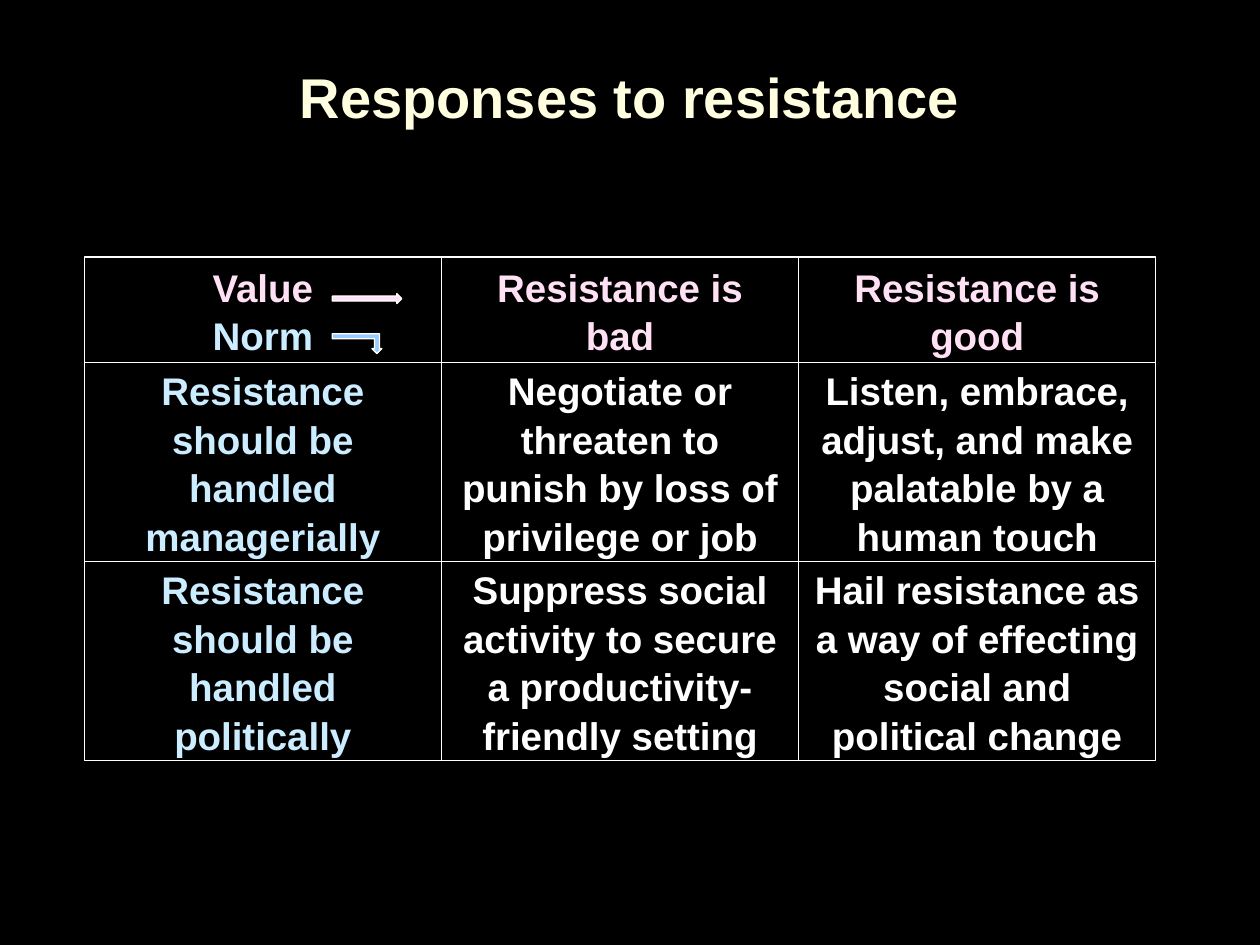
import pptx
import pptx.util
import pptx.dml.color
import pptx.enum.shapes
import pptx.enum.text

Cm = pptx.util.Cm
Pt = pptx.util.Pt
RGB = pptx.dml.color.RGBColor
KIND = pptx.enum.shapes.MSO_SHAPE
MID = pptx.enum.text.PP_ALIGN.CENTER
ANCHOR = pptx.enum.text.MSO_ANCHOR
FIT = pptx.enum.text.MSO_AUTO_SIZE

BLACK = RGB(0x00, 0x00, 0x00)
WHITE = RGB(0xFF, 0xFF, 0xFF)
CREAM = RGB(0xFF, 0xFF, 0xE0)
PINK = RGB(0xFF, 0xE0, 0xF5)
PALE = RGB(0xCC, 0xEC, 0xFF)
BLUE = RGB(0x99, 0xCC, 0xFF)


def style(par, size, color, gap):
    par.alignment = MID
    par.line_spacing = gap
    form = {"name": "Arial", "size": Pt(size), "bold": True}
    for key, val in form.items():
        setattr(par.font, key, val)
    par.font.color.rgb = color


def draw(kind, left, top, width, height, fill=None):
    shape = slide.shapes.add_shape(kind, Cm(left), Cm(top), Cm(width), Cm(height))
    shape.shadow.inherit = False
    if fill is None:
        shape.fill.background()
    else:
        shape.fill.solid()
        shape.fill.fore_color.rgb = fill
    shape.line.color.rgb = WHITE
    shape.line.width = Pt(0.75)
    return shape


deck = pptx.Presentation()
deck.slide_width = Cm(25.4)
deck.slide_height = Cm(19.05)
slide = deck.slides.add_slide(deck.slide_layouts[5])
slide.background.fill.solid()
slide.background.fill.fore_color.rgb = BLACK

title = slide.shapes.title
place = {"left": Cm(0), "top": Cm(1.04), "width": Cm(25.4), "height": Cm(1.9)}
for key, val in place.items():
    setattr(title, key, val)
title.text_frame.text = "Responses to resistance"
frame = {"auto_size": FIT.NONE, "vertical_anchor": ANCHOR.TOP, "margin_top": Cm(0.22)}
for key, val in frame.items():
    setattr(title.text_frame, key, val)
style(title.text_frame.paragraphs[0], 32, CREAM, 1)

rows = [
    (2.13, ["Value\nNorm", "Resistance is\vbad", "Resistance is good"]),
    (4.01, ["Resistance should be handled managerially",
            "Negotiate or threaten to punish by loss of privilege or job",
            "Listen, embrace, adjust, and make palatable by a human touch"]),
    (4.01, ["Resistance should be handled politically",
            "Suppress social activity to secure a productivity-friendly setting",
            "Hail resistance as a way of effecting social and political change"]),
]
inner = {"word_wrap": True, "vertical_anchor": ANCHOR.MIDDLE}
top = 5.18
for row, (height, texts) in enumerate(rows):
    for col, text in enumerate(texts):
        cell = draw(KIND.RECTANGLE, 1.7 + 7.2 * col, top, 7.2, height)
        cell.text_frame.text = text
        for key, val in inner.items():
            setattr(cell.text_frame, key, val)
        for num, par in enumerate(cell.text_frame.paragraphs):
            if row == 0 and num == 0:
                color = PINK
            elif col == 0:
                color = PALE
            else:
                color = WHITE
            style(par, 22, color, 1.05)
    top += height

down = draw(KIND.BENT_UP_ARROW, 6.7, 6.73, 1, 0.4, BLUE)
down.element.spPr.get_or_add_xfrm().set("flipV", "1")
draw(KIND.RIGHT_ARROW, 6.7, 5.92, 1.4, 0.2, PINK)

deck.save("out.pptx")
